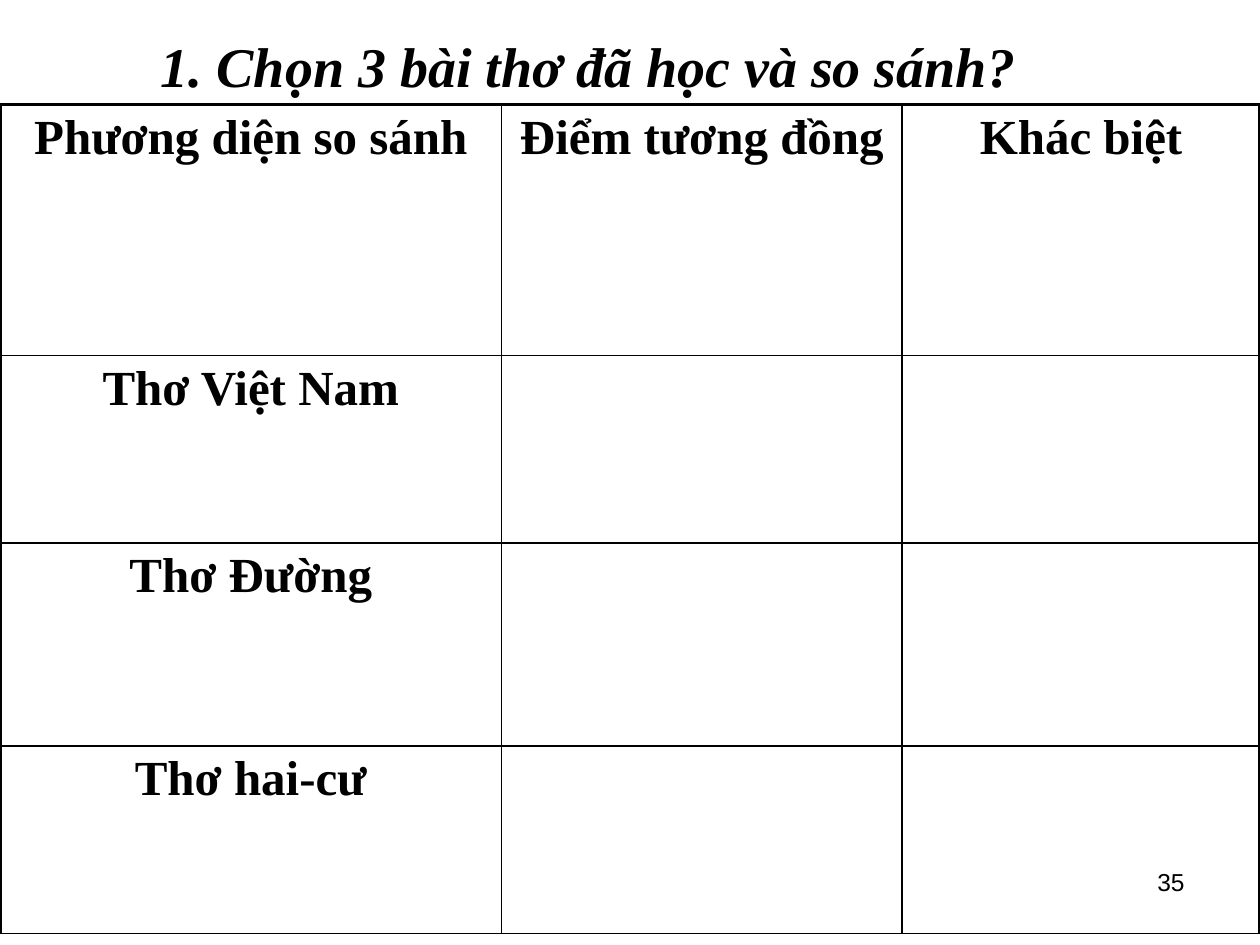
from dataclasses import dataclass

from lxml import etree
from pptx import Presentation
from pptx import util as u
from pptx.dml.color import RGBColor
from pptx.enum import text as t
from pptx.oxml import ns


@dataclass(frozen=True)
class Theme:
    ink: str = "000000"
    paper: str = "FFFFFF"
    serif: str = "Times New Roman"
    sans: str = "Arial"
    title: float = 32
    cell: float = 28
    number: float = 14
    thick: float = 2.25
    thin: float = 1


THEME = Theme()
HEADS = ["Phương diện so sánh", "Điểm tương đồng", "Khác biệt"]
POEMS = ["Thơ Việt Nam", "Thơ Đường", "Thơ hai-cư"]
COLS = [3.98, 3.18, 2.84]
ROWS = [1.99, 1.49, 1.61, 1.49]


def write(frame, words, size, font=THEME.serif, bold=True, italic=False,
          align=t.PP_ALIGN.CENTER, before=0):
    para = frame.paragraphs[0]
    para.alignment = align
    para.space_before = u.Pt(before)
    run = para.add_run()
    run.text = words
    face = run.font
    face.name, face.size = font, u.Pt(size)
    face.bold, face.italic = bold, italic
    face.color.rgb = RGBColor.from_string(THEME.ink)


def edge(cell, side, width):
    props = cell._tc.get_or_add_tcPr()
    line = etree.SubElement(props, ns.qn(f"a:ln{side}"), w=str(u.Pt(width)))
    fill = etree.SubElement(line, ns.qn("a:solidFill"))
    etree.SubElement(fill, ns.qn("a:srgbClr"), val=THEME.ink)


def add_title(slide, box):
    title = slide.shapes.title
    title.left, title.top, title.width, title.height = map(u.Inches, box)
    frame = title.text_frame
    frame.auto_size = t.MSO_AUTO_SIZE.NONE
    frame.vertical_anchor = t.MSO_ANCHOR.TOP
    # The heading hangs below its shallow box, just above the table
    frame.margin_top, frame.margin_bottom = u.Inches(0.25), 0
    write(frame, "1. Chọn 3 bài thơ đã học và so sánh?", THEME.title,
          italic=True)


def add_number(slide, box):
    frame = slide.shapes.add_textbox(*map(u.Inches, box)).text_frame
    frame.word_wrap = True
    write(frame, "35", THEME.number, font=THEME.sans, bold=False,
          align=t.PP_ALIGN.RIGHT)


def add_grid(slide, box):
    rows = [HEADS] + [[poem, "", ""] for poem in POEMS]
    table = slide.shapes.add_table(len(ROWS), len(COLS),
                                   *map(u.Inches, box)).table
    table.first_row = table.horz_banding = False
    for col, width in zip(table.columns, COLS):
        col.width = u.Inches(width)
    for row, height in zip(table.rows, ROWS):
        row.height = u.Inches(height)
    for r, words in enumerate(rows):
        for c, word in enumerate(words):
            cell = table.cell(r, c)
            # Outer left, top and right edges are thick
            outer = {"L": c == 0, "R": c == len(COLS) - 1,
                     "T": r == 0, "B": False}
            for side, heavy in outer.items():
                edge(cell, side, THEME.thick if heavy else THEME.thin)
            cell.fill.background()
            if word:
                write(cell.text_frame, word, THEME.cell,
                      before=THEME.cell * 0.2)


def main():
    deck = Presentation()
    deck.slide_width, deck.slide_height = u.Inches(10), u.Inches(7.5)
    slide = deck.slides.add_slide(deck.slide_layouts[5])
    back = slide.background.fill
    back.solid()
    back.fore_color.rgb = RGBColor.from_string(THEME.paper)
    add_number(slide, (7.17, 6.83, 2.33, 0.52))
    add_title(slide, (0.17, 0, 9, 0.42))
    add_grid(slide, (0, 0.83, 10, 6.58))
    deck.save("out.pptx")


if __name__ == "__main__":
    main()
